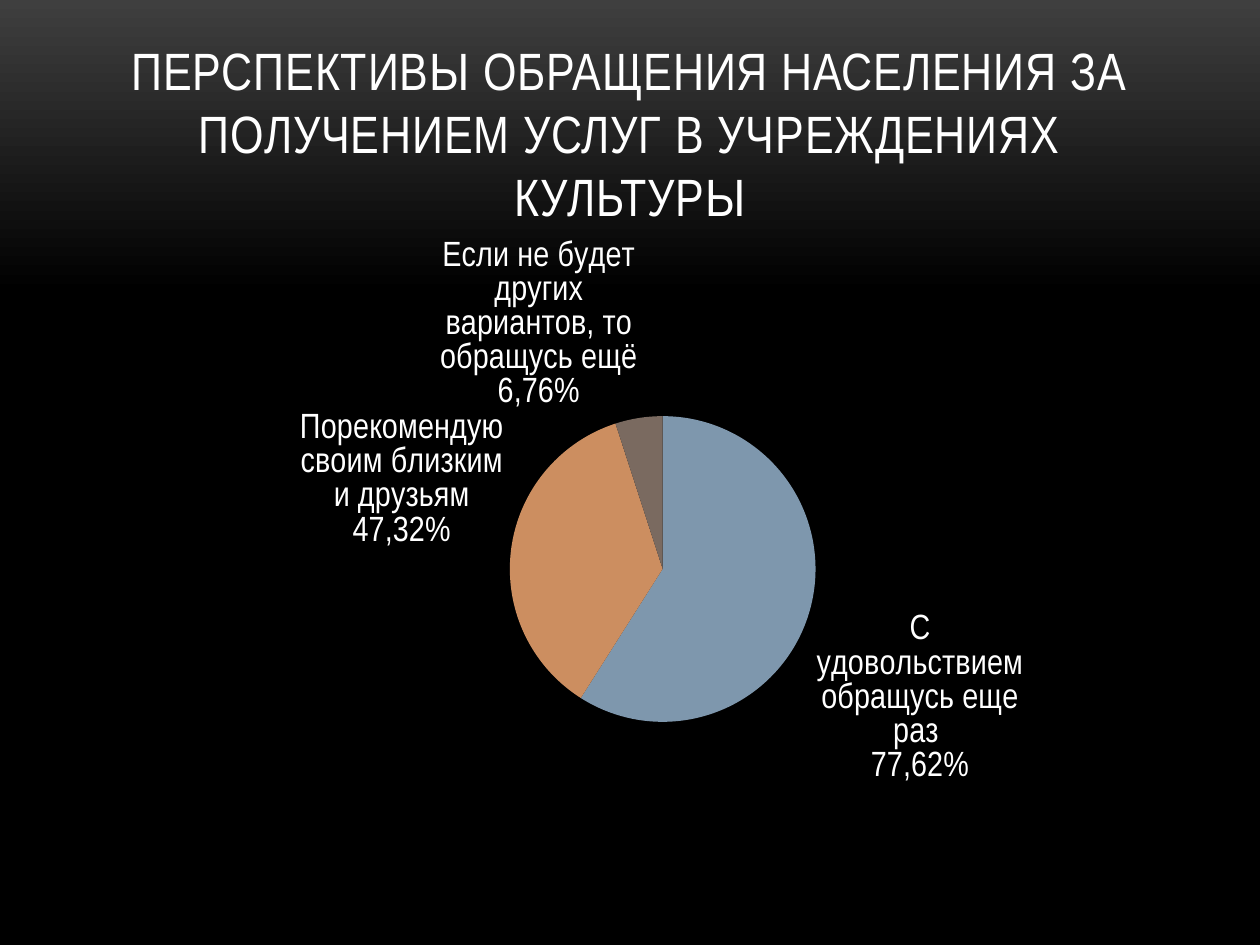
from lxml.etree import SubElement
from pptx import Presentation
from pptx.chart.data import CategoryChartData
from pptx.dml.color import RGBColor
from pptx.enum.chart import XL_CHART_TYPE, XL_LABEL_POSITION
from pptx.enum.text import MSO_ANCHOR, MSO_AUTO_SIZE, PP_ALIGN
from pptx.oxml.ns import qn
from pptx.util import Pt

PX = 914400 / 126
FONT = "Arial Narrow"
COLORS = {
    "white": "FFFFFF",
    "black": "000000",
    "charcoal": "3F3F3F",
    "blue": "7E97AD",
    "orange": "CC8E60",
    "brown": "7A6A60",
}
ANSWERS = [
    ("С удовольствием обращусь еще раз ", 59, "77,62%", "blue"),
    ("Порекомендую своим близким и друзьям", 36, "47,32%", "orange"),
    ("Если не будет других вариантов, то обращусь ещё", 5, "6,76%", "brown"),
]


def box(*lengths):
    return [round(length * PX) for length in lengths]


def style_font(font, size):
    font.name = FONT
    font.size = Pt(size)
    font.bold = False
    font.color.rgb = RGBColor.from_string(COLORS["white"])


presentation = Presentation()
presentation.slide_width, presentation.slide_height = box(1260, 945)
slide = presentation.slides.add_slide(presentation.slide_layouts[5])

background = slide.background.fill
background.gradient()
background.gradient_angle = 270
for stop, position, color in zip(background.gradient_stops, (0, 0.31), ("charcoal", "black")):
    stop.position = position
    stop.color.rgb = RGBColor.from_string(COLORS[color])

title = slide.shapes.title
title.left, title.top, title.width, title.height = box(84, 76, 1092, 157)
title_frame = title.text_frame
title_frame.text = "ПЕРСПЕКТИВЫ ОБРАЩЕНИЯ НАСЕЛЕНИЯ ЗА ПОЛУЧЕНИЕМ УСЛУГ В УЧРЕЖДЕНИЯХ КУЛЬТУРЫ"
title_frame.word_wrap = True
title_frame.auto_size = MSO_AUTO_SIZE.NONE
title_frame.vertical_anchor = MSO_ANCHOR.BOTTOM
paragraph = title_frame.paragraphs[0]
paragraph.alignment = PP_ALIGN.CENTER
run = paragraph.runs[0]
style_font(run.font, 30)
run._r.get_or_add_rPr().set("spc", "50")

chart_data = CategoryChartData()
chart_data.categories = [answer for answer, *_ in ANSWERS]
chart_data.add_series("Series 1", [value for _, value, *_ in ANSWERS])
chart = slide.shapes.add_chart(XL_CHART_TYPE.PIE, *box(84, 220, 1092, 629), chart_data).chart
chart.has_title = False
chart.has_legend = False
style_font(chart.font, 20)

plot = chart.plots[0]
plot.vary_by_categories = True
plot.has_data_labels = True
plot.data_labels.show_value = False
plot.data_labels.show_category_name = True
plot.data_labels.show_percentage = True
plot.data_labels.position = XL_LABEL_POSITION.OUTSIDE_END

for index, (answer, value, share, color) in enumerate(ANSWERS):
    point = plot.series[0].points[index]
    point.format.fill.solid()
    point.format.fill.fore_color.rgb = RGBColor.from_string(COLORS[color])
    point.format.line.fill.background()
    label = point.data_label
    label.text_frame.text = f"{answer}\n{share}"
    for paragraph in label.text_frame.paragraphs:
        style_font(paragraph.runs[0].font, 20)
    label.position = XL_LABEL_POSITION.OUTSIDE_END

plot_area = chart._chartSpace.chart.plotArea
for layout in plot_area.findall(qn("c:layout")):
    plot_area.remove(layout)
layout = SubElement(plot_area, qn("c:layout"))
plot_area.insert(0, layout)
manual_layout = SubElement(layout, qn("c:manualLayout"))
settings = {
    "layoutTarget": "inner",
    "xMode": "edge",
    "yMode": "edge",
    "x": 0.39,
    "y": 0.31,
    "w": 0.28,
    "h": 0.49,
}
for name, value in settings.items():
    SubElement(manual_layout, qn(f"c:{name}")).set("val", str(value))

presentation.save("out.pptx")
